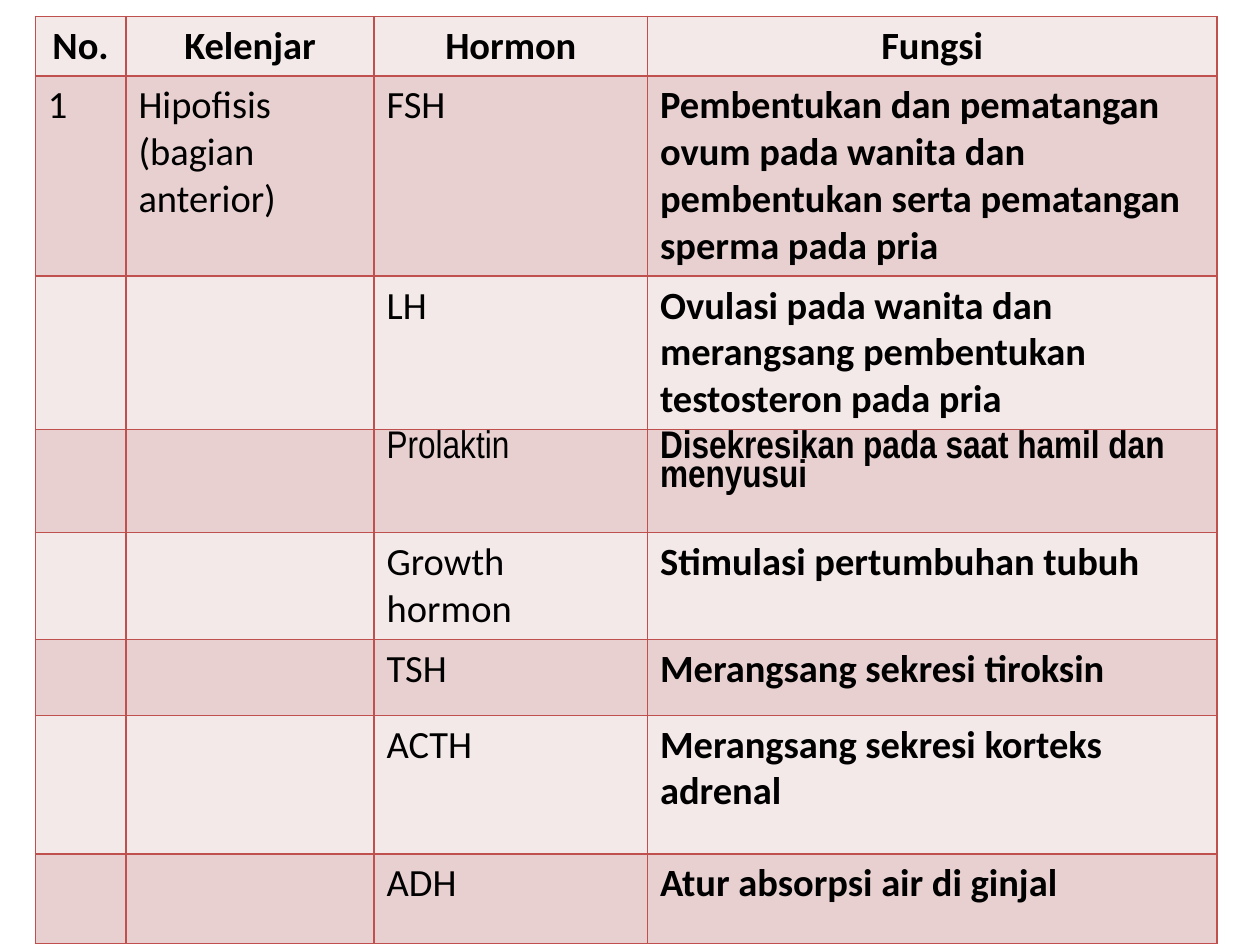
from lxml import etree
from pptx import Presentation
from pptx.dml.color import RGBColor
from pptx.enum.text import PP_ALIGN
from pptx.oxml.ns import qn
from pptx.util import Inches, Pt

CENTER, LEFT = PP_ALIGN.CENTER, PP_ALIGN.LEFT

THEME = {
    "font": "Calibri",
    "narrow_font": "Arial Narrow",
    "size": Pt(22),
    "text": RGBColor.from_string("000000"),
    "bands": [RGBColor.from_string("F4E9E9"), RGBColor.from_string("E8D0D0")],
    "border": "C0504D",
    "border_width": Pt(1),
}

ROWS = [
    ("No.", "Kelenjar", "Hormon", "Fungsi"),
    ("1", "Hipofisis\n(bagian anterior)", "FSH",
     "Pembentukan dan pematangan ovum pada wanita dan pembentukan serta pematangan sperma pada pria"),
    ("", "", "LH", "Ovulasi pada wanita dan merangsang pembentukan testosteron pada pria"),
    ("", "", "Prolaktin", "Disekresikan pada saat hamil dan menyusui"),
    ("", "", "Growth hormon", "Stimulasi pertumbuhan tubuh"),
    ("", "", "TSH", "Merangsang sekresi tiroksin"),
    ("", "", "ACTH", "Merangsang sekresi korteks adrenal"),
    ("", "", "ADH", "Atur absorpsi air di ginjal"),
]
COLUMN_WIDTHS = [0.72, 1.97, 2.17, 4.52]
ROW_HEIGHTS = [0.47, 1.59, 1.21, 0.82, 0.85, 0.6, 1.1, 0.71]
TABLE_LEFT, TABLE_TOP = 0.28, 0.13
HEADER_ROW, NARROW_ROW, FUNCTION_COLUMN = 0, 3, 3
NARROW_LINE_SPACING = 0.8


def add_borders(cell):
    """Draw all four sides; border elements must come before the cell's fill."""
    properties = cell._tc.get_or_add_tcPr()
    for position, side in enumerate(("a:lnL", "a:lnR", "a:lnT", "a:lnB")):
        line = etree.Element(qn(side), w=str(THEME["border_width"]))
        fill = etree.SubElement(line, qn("a:solidFill"))
        etree.SubElement(fill, qn("a:srgbClr"), val=THEME["border"])
        properties.insert(position, line)


def format_cell(cell, row, column):
    cell.fill.solid()
    cell.fill.fore_color.rgb = THEME["bands"][row % 2]
    add_borders(cell)
    narrow = row == NARROW_ROW
    for paragraph in cell.text_frame.paragraphs:
        paragraph.alignment = CENTER if row == HEADER_ROW else LEFT
        if narrow:
            paragraph.line_spacing = NARROW_LINE_SPACING
        font = paragraph.font
        for run in paragraph.runs:
            font = run.font
            font.name = THEME["narrow_font" if narrow else "font"]
            font.size = THEME["size"]
            font.bold = row == HEADER_ROW or column == FUNCTION_COLUMN
            font.color.rgb = THEME["text"]


def main():
    presentation = Presentation()
    presentation.slide_width, presentation.slide_height = Inches(10), Inches(7.5)
    slide = presentation.slides.add_slide(presentation.slide_layouts[6])
    table = slide.shapes.add_table(
        len(ROWS), len(COLUMN_WIDTHS), Inches(TABLE_LEFT), Inches(TABLE_TOP),
        Inches(sum(COLUMN_WIDTHS)), Inches(sum(ROW_HEIGHTS))).table
    for table_column, width in zip(table.columns, COLUMN_WIDTHS):
        table_column.width = Inches(width)
    for table_row, height in zip(table.rows, ROW_HEIGHTS):
        table_row.height = Inches(height)
    for row, texts in enumerate(ROWS):
        for column, text in enumerate(texts):
            cell = table.cell(row, column)
            cell.text_frame.text = text
            format_cell(cell, row, column)
    presentation.save("out.pptx")


if __name__ == "__main__":
    main()
